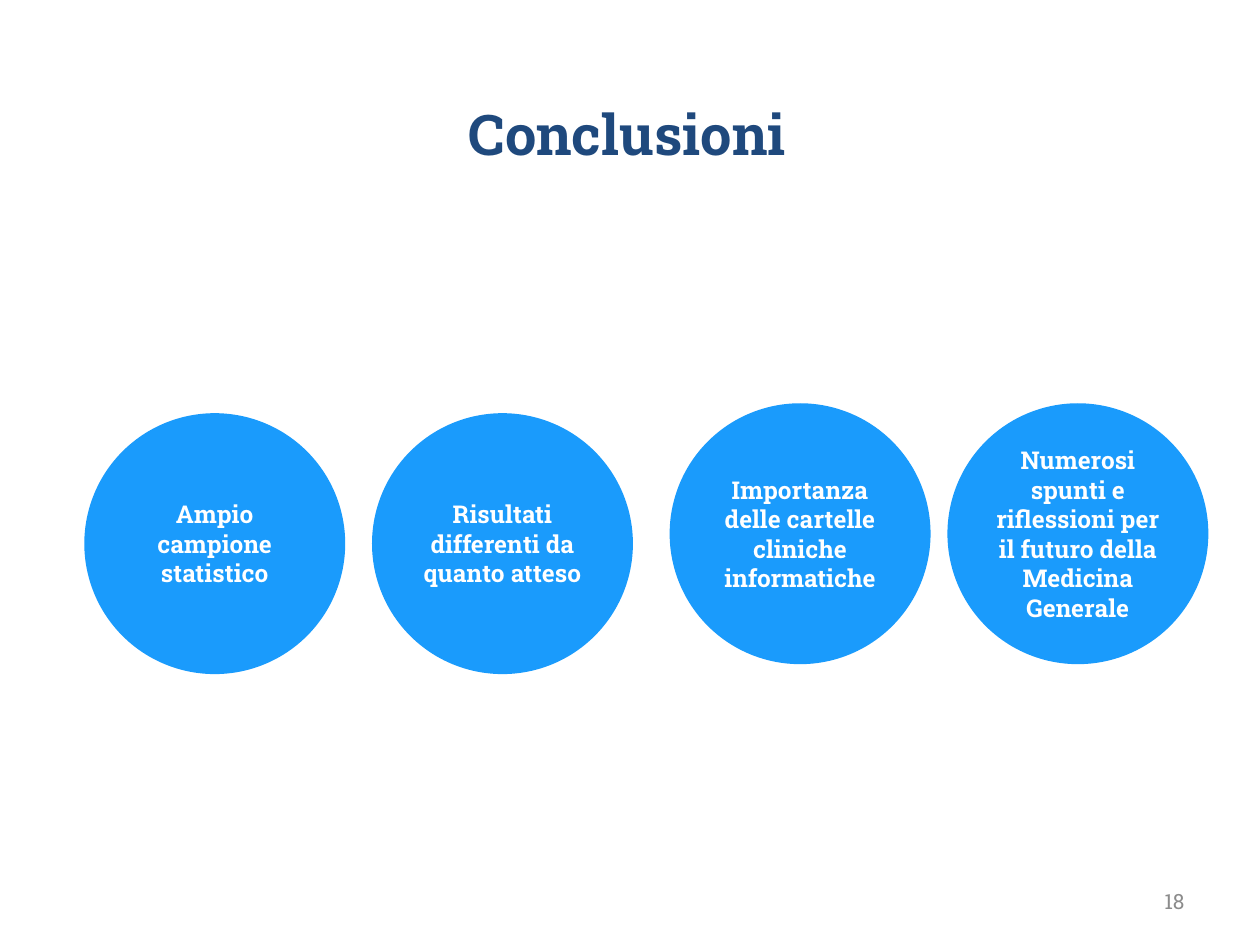
from pptx import Presentation
from pptx import util as u
from pptx.dml import color
from pptx.enum import shapes, text

NAVY = color.RGBColor(0x1F, 0x49, 0x7D)
BLUE = color.RGBColor(0x1A, 0x9B, 0xFC)
GREY = color.RGBColor(0x8C, 0x8C, 0x8C)
WHITE = color.RGBColor(0xFF, 0xFF, 0xFF)


class SlideBuilder:
    font_name = "Roboto Slab"
    diameter = u.Cm(5.26)

    def __init__(self, slide):
        self.slide = slide

    def add_wording(self, shape, wording, size, colour, bold, alignment):
        frame = shape.text_frame
        frame.word_wrap = True
        frame.auto_size = text.MSO_AUTO_SIZE.NONE
        frame.vertical_anchor = text.MSO_ANCHOR.MIDDLE
        frame.margin_left = frame.margin_right = u.Cm(0.18)
        frame.margin_top = frame.margin_bottom = u.Cm(0.1)
        paragraph = frame.paragraphs[0]
        paragraph.alignment = alignment
        run = paragraph.add_run()
        run.text = wording
        run.font.name = self.font_name
        run.font.size = u.Pt(size)
        run.font.bold = bold
        run.font.color.rgb = colour

    def title(self, wording):
        shape = self.slide.shapes.title
        shape.left, shape.top = u.Cm(1.7), u.Cm(1.32)
        shape.width, shape.height = u.Cm(21.9), u.Cm(2.74)
        self.add_wording(shape, wording, 32, NAVY, True, text.PP_ALIGN.CENTER)

    def page_number(self, number):
        shape = self.slide.shapes.add_textbox(
            u.Cm(18.21), u.Cm(17.65), u.Cm(5.92), u.Cm(1.02))
        self.add_wording(shape, number, 12, GREY, False, text.PP_ALIGN.RIGHT)
        shape.text_frame.margin_right = u.Cm(0.25)

    def circle(self, left, top, wording):
        shape = self.slide.shapes.add_shape(
            shapes.MSO_SHAPE.OVAL, u.Cm(left), u.Cm(top), self.diameter, self.diameter)
        shape.shadow.inherit = False
        shape.fill.solid()
        shape.fill.fore_color.rgb = BLUE
        shape.line.fill.background()
        self.add_wording(shape, wording, 14, WHITE, True, text.PP_ALIGN.CENTER)


def main():
    presentation = Presentation()
    presentation.slide_width, presentation.slide_height = u.Cm(25.4), u.Cm(19.05)
    title_only = presentation.slide_layouts[5]
    builder = SlideBuilder(presentation.slides.add_slide(title_only))

    # Heading and page number
    builder.title("Conclusioni")
    builder.page_number("18")

    # Conclusions: left, top, wording
    conclusions = [
        (1.7, 8.33, "Ampio campione statistico"),
        (7.5, 8.33, "Risultati differenti da quanto atteso"),
        (13.5, 8.13, "Importanza delle cartelle cliniche informatiche"),
        (19.1, 8.13, "Numerosi spunti e riflessioni per il futuro della Medicina Generale"),
    ]
    for left, top, wording in conclusions:
        builder.circle(left, top, wording)

    presentation.save("out.pptx")


if __name__ == "__main__":
    main()
